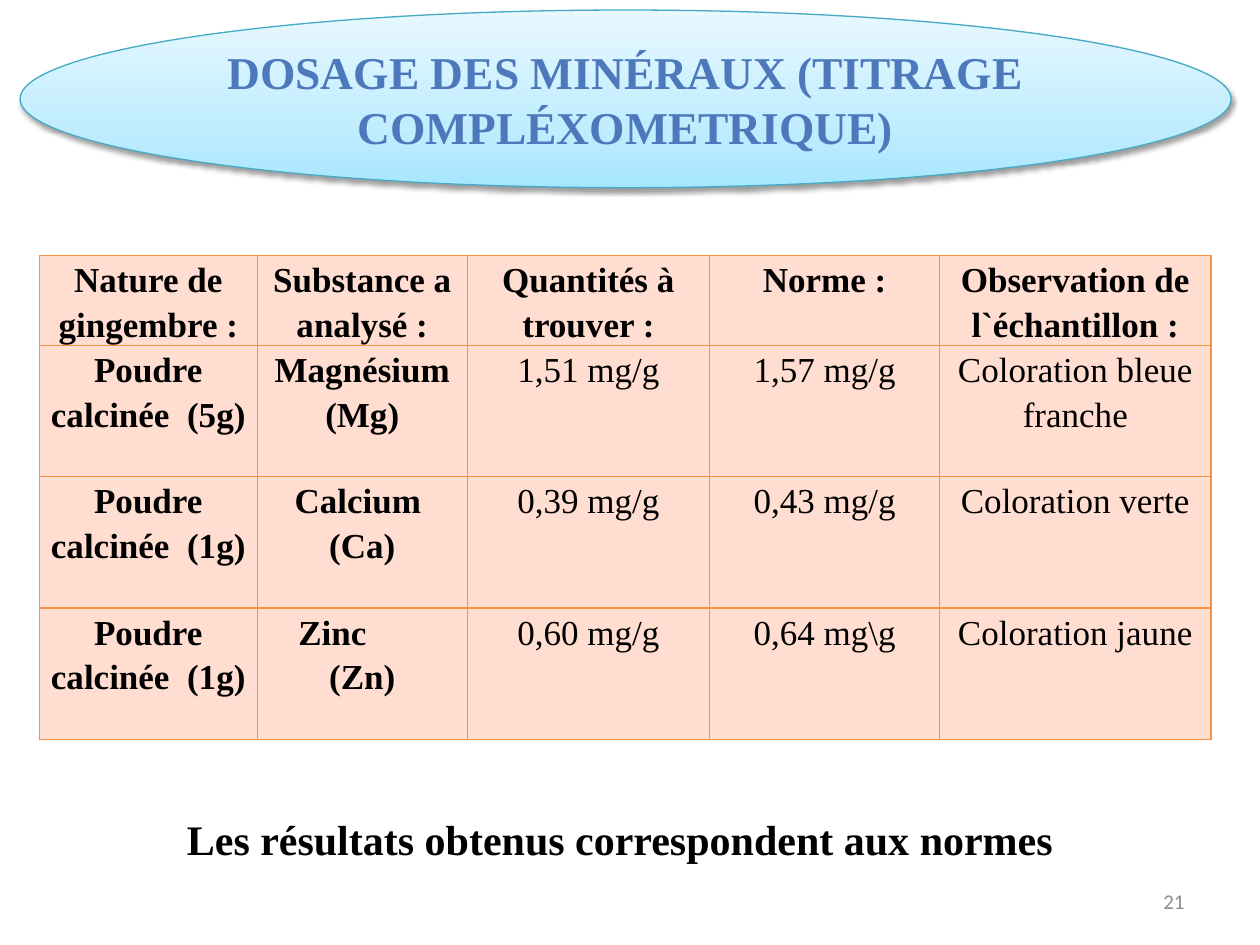
from lxml.etree import SubElement
from pptx import Presentation
from pptx.dml.color import RGBColor
from pptx.enum.shapes import MSO_SHAPE as Shape
from pptx.enum.text import MSO_ANCHOR as Anchor, PP_ALIGN as Align
from pptx.oxml import parse_xml
from pptx.oxml.ns import nsdecls, qn
from pptx.util import Pt

BLACK = RGBColor(0x00, 0x00, 0x00)
GREY = RGBColor(0x8C, 0x8C, 0x8C)
TITLE_BLUE = RGBColor(0x4D, 0x79, 0xBC)
TEAL = RGBColor(0x46, 0xAA, 0xC5)
ORANGE = RGBColor(0xF6, 0x92, 0x40)
PEACH = RGBColor(0xFF, 0xDD, 0xD0)
SKY = RGBColor(0xA7, 0xE6, 0xFF)
PALE_SKY = RGBColor(0xC1, 0xED, 0xFF)
ICE = RGBColor(0xE7, 0xF8, 0xFF)

BASE = {"name": "Times New Roman", "size": Pt(20), "bold": True, "color": BLACK}
TITLE = {**BASE, "size": Pt(26), "color": TITLE_BLUE}
CONCLUSION = {**BASE, "size": Pt(24)}
VALUE = {**BASE, "bold": False}
NUMBER = {"name": "Calibri", "size": Pt(12), "bold": False, "color": GREY}

COLUMN_WIDTHS = [124.5, 120, 138.5, 131.5, 155]
ROW_HEIGHTS = [51.5, 75, 75, 75]
ROWS = [
    ["Nature de gingembre :", "Substance a analysé :", "Quantités à trouver :",
     "Norme :", "Observation de l`échantillon :"],
    ["Poudre calcinée  (5g)", "Magnésium (Mg)", "1,51 mg/g", "1,57 mg/g",
     "Coloration bleue franche"],
    ["Poudre calcinée  (1g)", "Calcium \n(Ca)", "0,39 mg/g", "0,43 mg/g",
     "Coloration verte"],
    ["Poudre calcinée  (1g)", "Zinc\n(Zn)", "0,60 mg/g", "0,64 mg\\g",
     "Coloration jaune"],
]


class SlideBuilder:
    """Hold the text style and the current slide, and add elements to it."""

    def __init__(self, slide):
        self.slide = slide

    def set_text(self, frame, text, style, align=Align.CENTER, spacing=1.0):
        frame.text = text
        for paragraph in frame.paragraphs:
            paragraph.alignment = align
            paragraph.line_spacing = spacing
            for run in paragraph.runs:
                for key, value in style.items():
                    if key == "color":
                        run.font.color.rgb = value
                    else:
                        setattr(run.font, key, value)

    def text_box(self, box, text, style, align=Align.CENTER):
        frame = self.slide.shapes.add_textbox(*map(Pt, box)).text_frame
        frame.word_wrap = True
        frame.vertical_anchor = Anchor.MIDDLE
        self.set_text(frame, text, style, align)

    def banner(self, box, text, stops):
        shape = self.slide.shapes.add_shape(Shape.OVAL, *map(Pt, box))
        shape.line.color.rgb = TEAL
        shape.line.width = Pt(0.75)
        stop_xml = "".join(
            f'<a:gs pos="{percent * 1000}"><a:srgbClr val="{color}"/></a:gs>'
            for percent, color in stops)
        properties = shape._element.spPr
        properties.find(qn("a:prstGeom")).addnext(parse_xml(
            f'<a:gradFill {nsdecls("a")} rotWithShape="1"><a:gsLst>{stop_xml}</a:gsLst>'
            '<a:lin ang="16200000" scaled="0"/></a:gradFill>'))
        properties.append(parse_xml(
            f'<a:effectLst {nsdecls("a")}><a:outerShdw blurRad="{Pt(3.1)}" '
            f'dist="{Pt(1.6)}" dir="5400000" rotWithShape="0"><a:srgbClr val="{BLACK}">'
            '<a:alpha val="38000"/></a:srgbClr></a:outerShdw></a:effectLst>'))
        shape.text_frame.word_wrap = True
        shape.text_frame.vertical_anchor = Anchor.MIDDLE
        self.set_text(shape.text_frame, text, TITLE)

    def border(self, cell):
        properties = cell._tc.get_or_add_tcPr()
        for side in ("lnL", "lnR", "lnT", "lnB"):
            line = SubElement(properties, qn(f"a:{side}"), w=str(Pt(0.75)))
            fill = SubElement(line, qn("a:solidFill"))
            SubElement(fill, qn("a:srgbClr"), val=str(ORANGE))

    def table(self, left, top, rows, widths, heights):
        table = self.slide.shapes.add_table(
            len(rows), len(widths), Pt(left), Pt(top),
            Pt(sum(widths)), Pt(sum(heights))).table
        for column, width in zip(table.columns, widths):
            column.width = Pt(width)
        for row, height in zip(table.rows, heights):
            row.height = Pt(height)
        margins = {"margin_left": Pt(5), "margin_right": Pt(5),
                   "margin_top": 0, "margin_bottom": 0}
        for row_index, texts in enumerate(rows):
            for column_index, text in enumerate(texts):
                cell = table.cell(row_index, column_index)
                for key, value in margins.items():
                    setattr(cell, key, value)
                self.border(cell)
                cell.fill.solid()
                cell.fill.fore_color.rgb = PEACH
                is_label = row_index == 0 or column_index < 2
                self.set_text(cell.text_frame, text, BASE if is_label else VALUE,
                              spacing=1.15)
        return table

    def indent(self, paragraph, margin):
        paragraph.alignment = Align.LEFT
        paragraph._p.get_or_add_pPr().set("marL", str(Pt(margin)))


def main():
    presentation = Presentation()
    presentation.slide_width = Pt(720)
    presentation.slide_height = Pt(540)
    slide = presentation.slides.add_slide(presentation.slide_layouts[6])
    builder = SlideBuilder(slide)
    table = builder.table(22.5, 146, ROWS, COLUMN_WIDTHS, ROW_HEIGHTS)
    builder.indent(table.cell(3, 1).text_frame.paragraphs[0], 18.5)
    builder.text_box((34, 461.5, 646.5, 36),
                     "Les résultats obtenus correspondent aux normes ", CONCLUSION)
    builder.banner((11.5, 5.75, 692, 101.5),
                   "DOSAGE DES MINÉRAUX (TITRAGE COMPLÉXOMETRIQUE)",
                   [(0, SKY), (35, PALE_SKY), (100, ICE)])
    builder.text_box((516, 500.5, 168, 28.75), "21", NUMBER, Align.RIGHT)
    presentation.save("out.pptx")


if __name__ == "__main__":
    main()
